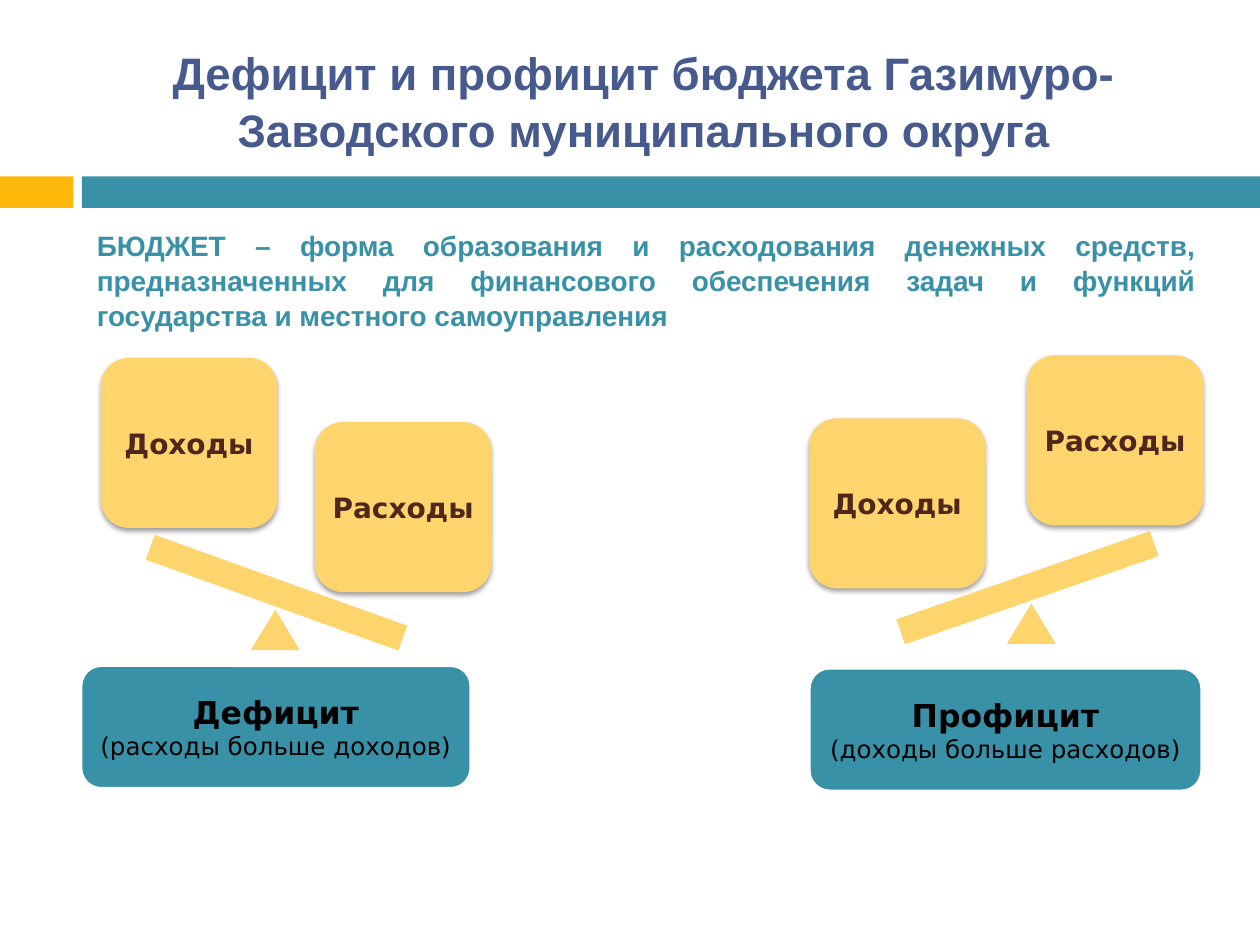
from lxml.etree import SubElement
from pptx import Presentation
from pptx.dml.color import RGBColor
from pptx.enum.shapes import MSO_SHAPE
from pptx.enum.text import MSO_ANCHOR, PP_ALIGN
from pptx.oxml.ns import qn
from pptx.util import Inches, Pt

TEAL, AMBER, SAND, BROWN = "3891A7", "FEB80A", "FED46C", "4F271C"


def add_text(p, text, size, color, font="DejaVu Sans", bold=True,
             align=PP_ALIGN.CENTER, spacing=None):
    p.alignment = align
    p.line_spacing = spacing
    r = p.add_run()
    r.text = text
    r.font.name, r.font.size, r.font.bold = font, Pt(size), bold
    r.font.color.rgb = RGBColor.from_string(color)


def add_box(shapes, kind, box, fill, line=None):
    sp = shapes.add_shape(kind, *[Inches(v) for v in box])
    sp.shadow.inherit = False
    sp.fill.solid()
    sp.fill.fore_color.rgb = RGBColor.from_string(fill)
    if line:
        sp.line.color.rgb = RGBColor.from_string(line)
        sp.line.width = Pt(2)
    else:
        sp.line.fill.background()
    tf = sp.text_frame
    tf.word_wrap = True
    tf.vertical_anchor = MSO_ANCHOR.MIDDLE
    tf.margin_left = tf.margin_right = Inches(0.04)
    return sp


prs = Presentation()
prs.slide_width, prs.slide_height = Inches(10), Inches(7.5)
s = prs.slides.add_slide(prs.slide_layouts[5])

# Header band and title
add_box(s.shapes, MSO_SHAPE.RECTANGLE, (0, 1.4, 0.58, 0.25), AMBER)
add_box(s.shapes, MSO_SHAPE.RECTANGLE, (0.65, 1.4, 9.35, 0.25), TEAL)

title = s.shapes.title
title.left, title.top = Inches(0.64), Inches(0.25)
title.width, title.height = Inches(8.94), Inches(1.08)
title.text_frame.vertical_anchor = MSO_ANCHOR.MIDDLE
add_text(title.text_frame.paragraphs[0],
         "Дефицит и профицит бюджета Газимуро-Заводского муниципального округа",
         26, "475A8D", font="Arial", spacing=1.05)

# Definition
tb = s.shapes.add_textbox(Inches(0.67), Inches(1.75), Inches(8.92), Inches(0.95))
tb.text_frame.word_wrap = True
add_text(tb.text_frame.paragraphs[0],
         "БЮДЖЕТ – форма образования и расходования денежных средств, "
         "предназначенных для финансового обеспечения задач и функций "
         "государства и местного самоуправления",
         16, TEAL, font="Arial", align=PP_ALIGN.JUSTIFY, spacing=1.05)

# Scales: income position, expense position, beam, beam angle, pivot, caption
scales = [
    ((0.8, 2.84), (2.5, 3.35), (1.13, 4.6), 19.8, (1.99, 4.84),
     (0.64, 5.28, 3.1, 0.98), "Дефицит", "(расходы больше доходов)"),
    ((6.42, 3.32), (8.15, 2.82), (7.09, 4.56), -19.2, (7.99, 4.79),
     (6.42, 5.3, 3.12, 0.98), "Профицит", "(доходы больше расходов)"),
]
for income, expense, beam, angle, pivot, caption, name, note in scales:
    scale = s.shapes.add_group_shape().shapes
    for label, pos in (("Доходы", income), ("Расходы", expense)):
        sp = add_box(scale, MSO_SHAPE.ROUNDED_RECTANGLE, (*pos, 1.4, 1.35), SAND)
        add_text(sp.text_frame.paragraphs[0], label, 16, BROWN)
        effects = sp._element.spPr.find(qn("a:effectLst"))
        shadow = SubElement(effects, qn("a:outerShdw"), blurRad=str(Pt(3.1)),
                            dist=str(Pt(1.6)), dir="5400000", rotWithShape="0")
        color = SubElement(shadow, qn("a:srgbClr"), val="000000")
        SubElement(color, qn("a:alpha"), val="38000")
    add_box(scale, MSO_SHAPE.RECTANGLE, (*beam, 2.13, 0.21), SAND).rotation = angle
    add_box(scale, MSO_SHAPE.ISOSCELES_TRIANGLE, (*pivot, 0.39, 0.32), SAND)

    sp = add_box(s.shapes, MSO_SHAPE.ROUNDED_RECTANGLE, caption, TEAL, line="FFFFFF")
    add_text(sp.text_frame.paragraphs[0], name, 18, "000000")
    add_text(sp.text_frame.add_paragraph(), note, 14, "000000", bold=False)

prs.save("out.pptx")
